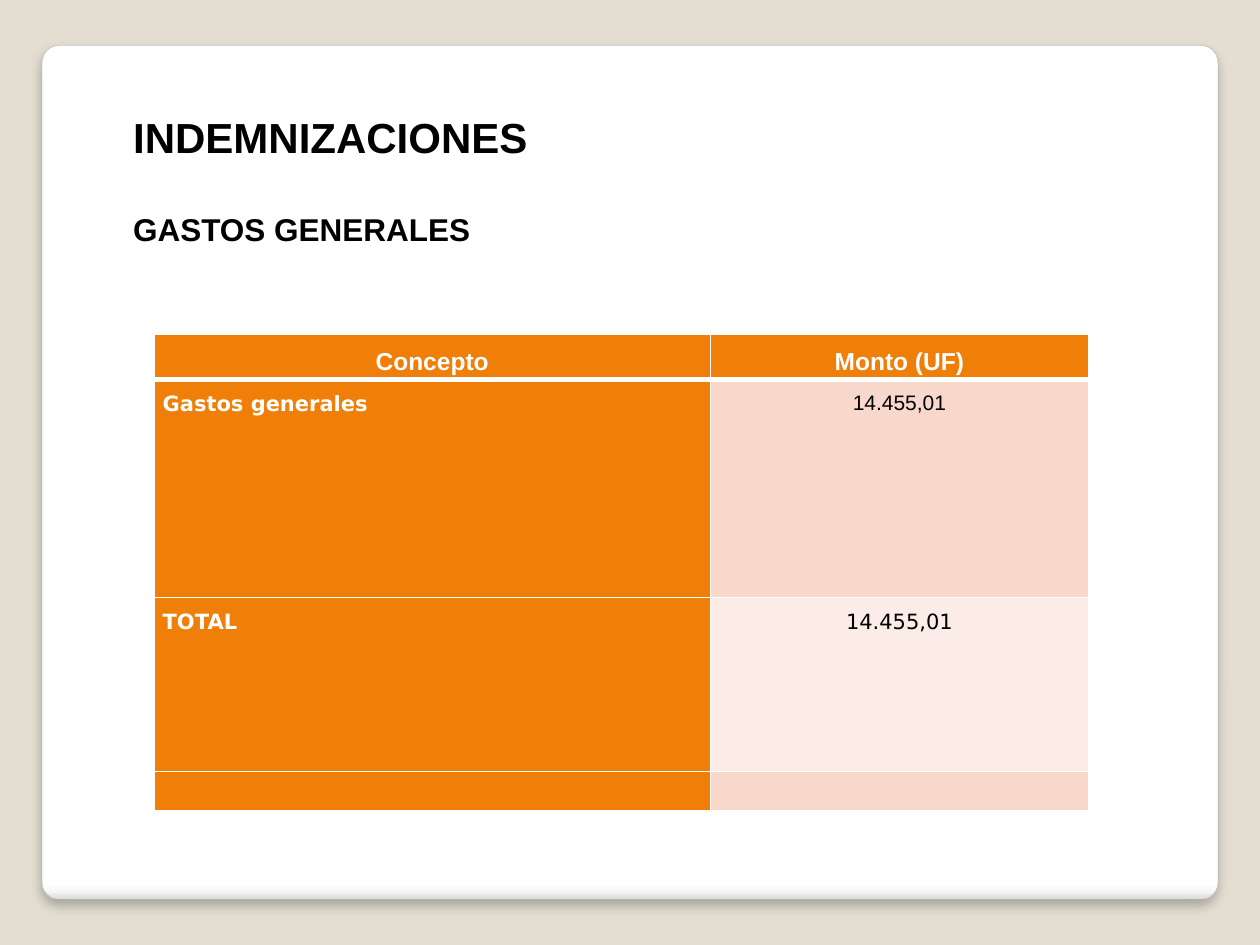
from dataclasses import dataclass

from lxml.etree import SubElement
from pptx import Presentation
from pptx.dml.color import RGBColor
from pptx.enum.shapes import MSO_SHAPE as Shape
from pptx.enum.text import PP_ALIGN as Align
from pptx.oxml.ns import qn
from pptx.util import Pt


@dataclass(frozen=True)
class Theme:
    background: str = "E3DED1"
    panel_line: str = "A4A4A4"
    panel_stops: tuple = ((0, "FFFFFF"), (98, "FFFFFF"), (99, "F7F7F7"), (100, "DADADA"))
    ink: str = "000000"
    white: str = "FFFFFF"
    accent: str = "F07F09"
    bands: tuple = ("F9D8CC", "FCECE7")
    font: str = "Arial"
    body_font: str = "DejaVu Sans"
    title_size: int = 24
    subtitle_size: int = 18
    header_size: int = 14
    body_size: int = 12


THEME = Theme()
COLUMNS = (318, 216)
ROWS = (26, 124.5, 99.5, 22.5)


def rgb(color):
    return RGBColor.from_string(color)


def add_color(parent, color, alpha=None):
    node = SubElement(parent, qn("a:srgbClr"), val=color)
    if alpha is not None:
        SubElement(node, qn("a:alpha"), val=str(alpha * 1000))


def write(paragraph, text, size, color, bold, align, font=THEME.font):
    paragraph.text = text
    paragraph.alignment = align
    paragraph.font.name = font
    paragraph.font.size = Pt(size)
    paragraph.font.bold = bold
    paragraph.font.color.rgb = rgb(color)


def add_panel(slide):
    panel = slide.shapes.add_shape(Shape.ROUNDED_RECTANGLE, Pt(24), Pt(26), Pt(672), Pt(488))
    panel.adjustments[0] = 0.02
    panel.fill.gradient()
    panel.fill.gradient_angle = 270
    properties = panel._element.spPr
    stops = properties.find(".//" + qn("a:gsLst"))
    for stop in list(stops):
        stops.remove(stop)
    for position, color in THEME.panel_stops:
        add_color(SubElement(stops, qn("a:gs"), pos=str(position * 1000)), color)
    panel.line.color.rgb = rgb(THEME.panel_line)
    panel.line.width = Pt(0.16)
    panel.shadow.inherit = False
    shadow = SubElement(
        properties.find(qn("a:effectLst")), qn("a:outerShdw"),
        blurRad=str(Pt(6)), dist=str(Pt(4)), dir="5400000", rotWithShape="0",
    )
    add_color(shadow, THEME.ink, 25)


def add_headings(slide):
    frame = slide.shapes.add_textbox(Pt(69), Pt(60), Pt(578), Pt(87)).text_frame
    frame.word_wrap = True
    write(frame.paragraphs[0], "INDEMNIZACIONES", THEME.title_size, THEME.ink, True, Align.JUSTIFY)
    subtitle = frame.add_paragraph()
    write(subtitle, "GASTOS GENERALES", THEME.subtitle_size, THEME.ink, True, Align.JUSTIFY)
    subtitle.space_before = Pt(27.5)


def style_cell(cell, fill, top=1, bottom=1):
    cell.margin_left = cell.margin_right = Pt(5)
    cell.margin_top = cell.margin_bottom = 0
    properties = cell._tc.get_or_add_tcPr()
    for side, width in (("L", 1), ("R", 1), ("T", top), ("B", bottom)):
        border = SubElement(properties, qn("a:ln" + side), w=str(Pt(width)))
        add_color(SubElement(border, qn("a:solidFill")), THEME.white)
    cell.fill.solid()
    cell.fill.fore_color.rgb = rgb(fill)


def write_cell(cell, *text_style):
    paragraph = cell.text_frame.paragraphs[0]
    write(paragraph, *text_style)
    paragraph.line_spacing = 1.5
    paragraph.space_after = Pt(10)


def add_expenses(slide):
    table = slide.shapes.add_table(
        len(ROWS), len(COLUMNS), Pt(88), Pt(191), Pt(sum(COLUMNS)), Pt(sum(ROWS))
    ).table
    for column, width in zip(table.columns, COLUMNS):
        column.width = Pt(width)
    for row, height in zip(table.rows, ROWS):
        row.height = Pt(height)

    for index, heading in enumerate(("Concepto", "Monto (UF)")):
        cell = table.cell(0, index)
        style_cell(cell, THEME.accent, bottom=3)
        write_cell(cell, heading, THEME.header_size, THEME.white, True, Align.CENTER)

    expenses = (
        ("Gastos generales", "14.455,01", THEME.font),
        ("TOTAL", "14.455,01", THEME.body_font),
        ("", "", THEME.font),
    )
    for index, (concept, amount, amount_font) in enumerate(expenses, start=1):
        concept_cell, amount_cell = table.cell(index, 0), table.cell(index, 1)
        top = 3 if index == 1 else 1
        style_cell(concept_cell, THEME.accent, top)
        style_cell(amount_cell, THEME.bands[(index - 1) % 2], top)
        if concept:
            write_cell(concept_cell, concept, THEME.body_size, THEME.white, True,
                       Align.JUSTIFY, THEME.body_font)
            write_cell(amount_cell, amount, THEME.body_size, THEME.ink, False,
                       Align.CENTER, amount_font)


def main():
    deck = Presentation()
    deck.slide_width, deck.slide_height = Pt(720), Pt(540)
    slide = deck.slides.add_slide(deck.slide_layouts[6])
    slide.background.fill.solid()
    slide.background.fill.fore_color.rgb = rgb(THEME.background)
    add_panel(slide)
    add_headings(slide)
    add_expenses(slide)
    deck.save("out.pptx")


if __name__ == "__main__":
    main()
